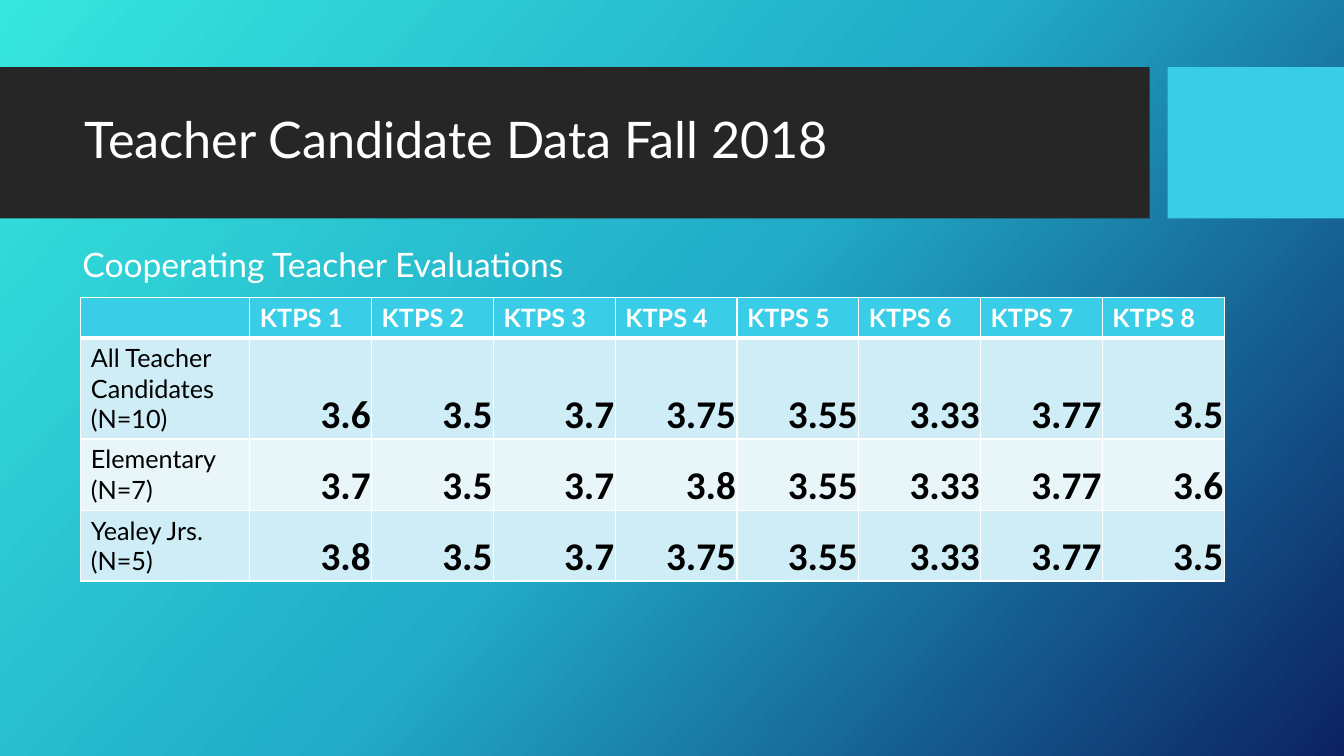
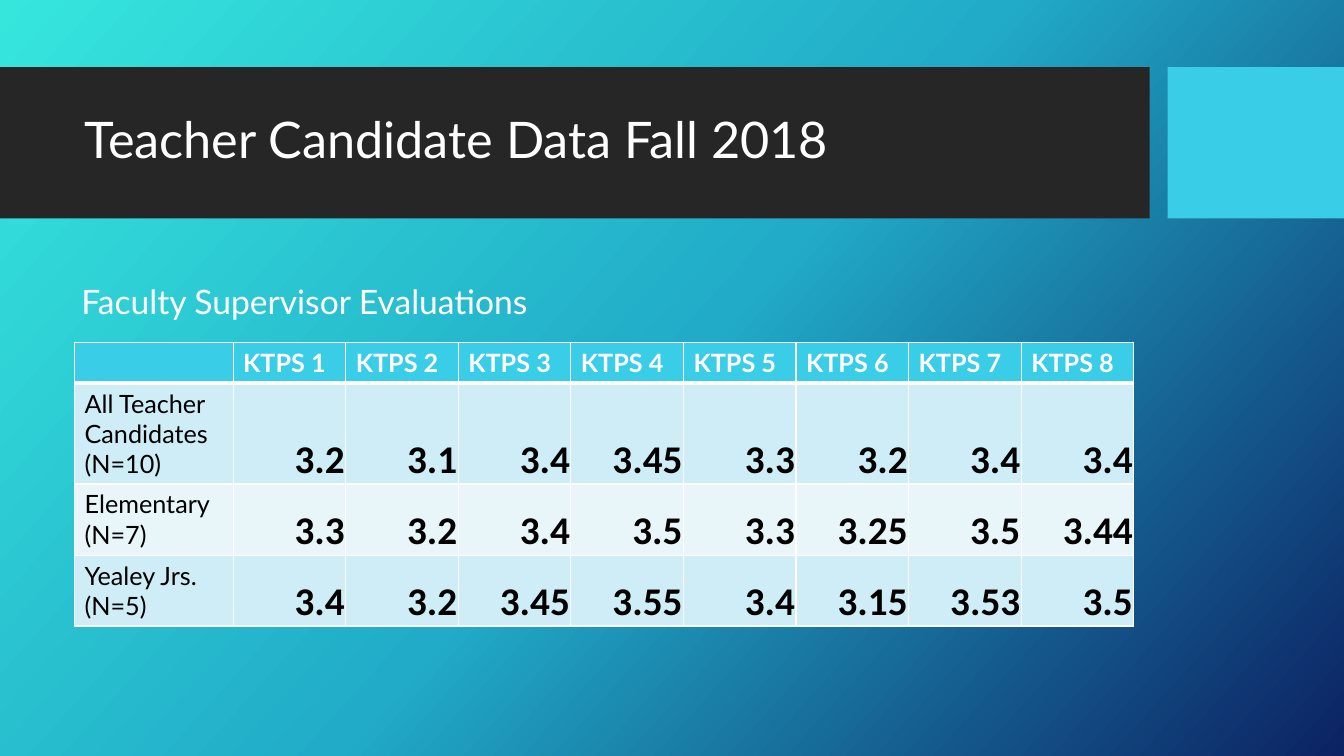
from copy import deepcopy
from dataclasses import dataclass

from lxml import etree
from pptx import Presentation
from pptx.dml.color import RGBColor
from pptx.enum.shapes import MSO_SHAPE
from pptx.enum.text import MSO_ANCHOR, PP_ALIGN
from pptx.oxml.ns import qn
from pptx.util import Emu, Pt

RECTANGLE = MSO_SHAPE.RECTANGLE
TOP, MIDDLE, BOTTOM = MSO_ANCHOR.TOP, MSO_ANCHOR.MIDDLE, MSO_ANCHOR.BOTTOM
LEFT, RIGHT = PP_ALIGN.LEFT, PP_ALIGN.RIGHT
EMU_PER_PX = 9525
BLANK_LAYOUT = 6


@dataclass(frozen=True)
class Theme:
    background: tuple = ((0, "36E6DD"), (0.5, "21ABC8"), (1, "0C2263"))
    background_angle: int = 318
    band: str = "262626"
    accent: str = "39CDE7"
    light: str = "FFFFFF"
    dark: str = "000000"
    stripes: tuple = ("CEEDF6", "E8F6FA")
    text_font: str = "Lato"
    score_font: str = "Calibri"
    title_size: int = 36
    caption_size: int = 24
    label_size: int = 18
    score_size: int = 28
    rule: int = 1
    header_rule: int = 3


def px(length):
    return Emu(length * EMU_PER_PX)


def rgb(value):
    return RGBColor.from_string(value)


class Deck:
    """Holds the theme and the current slide, and draws each kind of element."""

    def __init__(self, theme):
        self.theme = theme
        self.presentation = Presentation()
        self.presentation.slide_width = px(1280)
        self.presentation.slide_height = px(720)
        self.slide = None

    def add_slide(self, title):
        layout = self.presentation.slide_layouts[BLANK_LAYOUT]
        self.slide = self.presentation.slides.add_slide(layout)
        self.paint_background()
        self.band(0, 1095, self.theme.band)
        self.band(1112, 168, self.theme.accent)
        self.text(title, (71, 79, 1009, 113), self.theme.title_size, MIDDLE, 0.9)

    def paint_background(self):
        fill = self.slide.background.fill
        fill.gradient()
        fill.gradient_angle = self.theme.background_angle
        stop_list = self.slide.element.find(".//" + qn("a:gsLst"))
        stop_list.append(deepcopy(stop_list[0]))
        for stop, (position, color) in zip(fill.gradient_stops, self.theme.background):
            stop.position = position
            stop.color.rgb = rgb(color)

    def band(self, left, width, color):
        band = self.slide.shapes.add_shape(RECTANGLE, px(left), px(64), px(width), px(144))
        band.shadow.inherit = False
        band.fill.solid()
        band.fill.fore_color.rgb = rgb(color)
        band.line.fill.background()

    def text(self, wording, box, size, anchor=TOP, spacing=1.0):
        frame = self.slide.shapes.add_textbox(*map(px, box)).text_frame
        frame.word_wrap = True
        frame.vertical_anchor = anchor
        frame.text = wording
        frame.paragraphs[0].line_spacing = spacing
        self.style(frame, self.theme.text_font, size, self.theme.light)

    def style(self, frame, face, size, color, bold=False, align=LEFT):
        for paragraph in frame.paragraphs:
            paragraph.alignment = align
            font = paragraph.font
            font.name, font.size, font.bold = face, Pt(size), bold
            font.color.rgb = rgb(color)

    def borders(self, cell, top, bottom):
        properties = cell._tc.get_or_add_tcPr()
        rule = self.theme.rule
        for side, points in (("L", rule), ("R", rule), ("T", top), ("B", bottom)):
            line = etree.SubElement(properties, qn(f"a:ln{side}"), w=str(Pt(points)))
            solid = etree.SubElement(line, qn("a:solidFill"))
            etree.SubElement(solid, qn("a:srgbClr"), val=self.theme.light)

    def cell(self, cell, wording, row, column):
        theme = self.theme
        self.borders(
            cell,
            theme.header_rule if row == 1 else theme.rule,
            theme.header_rule if row == 0 else theme.rule,
        )
        cell.fill.solid()
        cell.fill.fore_color.rgb = rgb(theme.stripes[(row - 1) % 2] if row else theme.accent)
        cell.text = wording
        frame = cell.text_frame
        if row == 0:
            self.style(frame, theme.text_font, theme.label_size, theme.light, True)
        elif column == 0:
            self.style(frame, theme.text_font, theme.label_size, theme.dark)
        else:
            cell.vertical_anchor = BOTTOM
            cell.margin_left = cell.margin_right = cell.margin_top = px(1)
            cell.margin_bottom = 0
            self.style(frame, theme.score_font, theme.score_size, theme.dark, True, RIGHT)

    def table(self, rows, left, top, width, label_width):
        heights = (39, 96, 68, 67)
        table = self.slide.shapes.add_table(
            len(rows), len(rows[0]), px(left), px(top), px(width), px(sum(heights))
        ).table
        table.horz_banding = False
        score_width = px(width - label_width) // (len(rows[0]) - 1)
        for index, column in enumerate(table.columns):
            column.width = score_width if index else px(label_width)
        for row, (height, wordings) in enumerate(zip(heights, rows)):
            table.rows[row].height = px(height)
            for column, wording in enumerate(wordings):
                self.cell(table.cell(row, column), wording, row, column)


TITLE = "Teacher Candidate Data Fall 2018"
HEADER = ["", *(f"KTPS {number}" for number in range(1, 9))]
GROUPS = ("All Teacher Candidates\n(N=10)", "Elementary\n(N=7)", "Yealey Jrs.\n(N=5)")
EVALUATIONS = (
    (
        "Cooperating Teacher Evaluations",
        (69, 228, 718, 48),
        (77, 283, 1089, 161),
        (
            "3.6 3.5 3.7 3.75 3.55 3.33 3.77 3.5",
            "3.7 3.5 3.7 3.8 3.55 3.33 3.77 3.6",
            "3.8 3.5 3.7 3.75 3.55 3.33 3.77 3.5",
        ),
    ),
    (
        "Faculty Supervisor Evaluations",
        (68, 263, 459, 48),
        (71, 326, 1009, 151),
        (
            "3.2 3.1 3.4 3.45 3.3 3.2 3.4 3.4",
            "3.3 3.2 3.4 3.5 3.3 3.25 3.5 3.44",
            "3.4 3.2 3.45 3.55 3.4 3.15 3.53 3.5",
        ),
    ),
)


def main():
    deck = Deck(Theme())
    for caption, caption_box, table_place, scores in EVALUATIONS:
        deck.add_slide(TITLE)
        rows = [[group, *line.split()] for group, line in zip(GROUPS, scores)]
        deck.table([HEADER, *rows], *table_place)
        deck.text(caption, caption_box, deck.theme.caption_size)
    deck.presentation.save("out.pptx")


if __name__ == "__main__":
    main()
